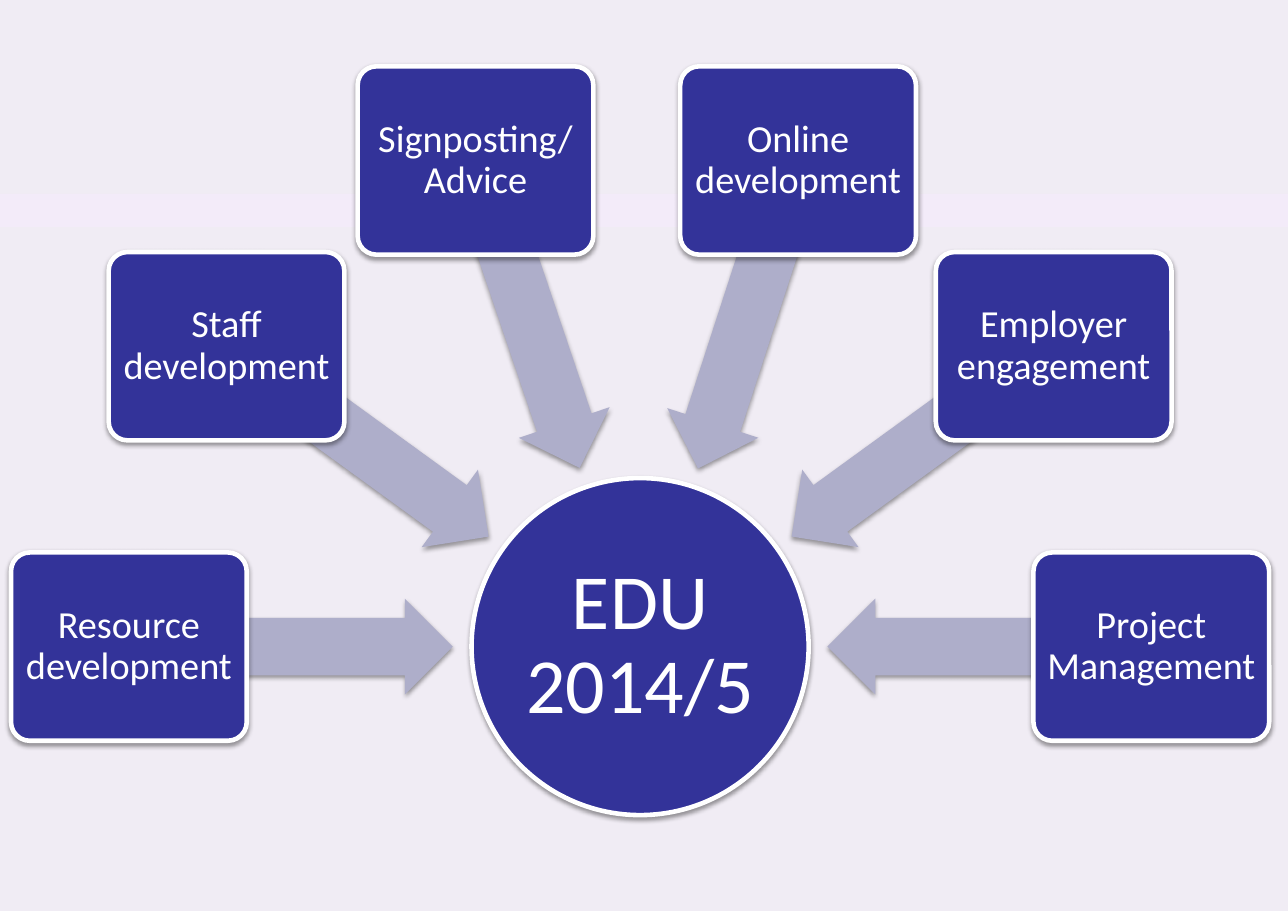
"""Build a slide of six work areas feeding into one central hub."""
import math

from lxml import etree
from pptx import Presentation
from pptx.dml.color import RGBColor
from pptx.enum import shapes, text
from pptx.oxml import ns
from pptx.util import Inches, Pt

HUB_LABEL = "EDU 2014/5"
AREAS = [
    ("Resource development", 0),
    ("Staff development", 0),
    ("Signposting/ Advice", -0.06),
    ("Online development", 0),
    ("Employer engagement", 0),
    ("Project Management", 0),
]

PAGE_WIDTH, PAGE_HEIGHT = 11.69, 8.27
HUB_X, HUB_Y, HUB_SIZE = 5.81, 5.87, 3.06
BOX_WIDTH, BOX_HEIGHT = 2.14, 1.71
ARROW_LENGTH, ARROW_HEIGHT = 2.94, 0.87
BOX_RADIUS, ARROW_RADIUS = 4.64, 3.17

BACKGROUND = RGBColor(0xF0, 0xEC, 0xF4)
BAND = RGBColor(0xF3, 0xEB, 0xF9)
INDIGO = RGBColor(0x33, 0x33, 0x99)
LAVENDER = RGBColor(0xAE, 0xAE, 0xCA)
WHITE = RGBColor(0xFF, 0xFF, 0xFF)


def add_centred(page, kind, x, y, width, height, fill):
    shape = page.shapes.add_shape(
        kind, Inches(x - width / 2), Inches(y - height / 2), Inches(width), Inches(height))
    shape.shadow.inherit = False
    shape.fill.solid()
    shape.fill.fore_color.rgb = fill
    shape.line.fill.background()
    return shape


def add_shadow(shape):
    effects = shape.element.spPr.find(ns.qn("a:effectLst"))
    shadow = etree.SubElement(
        effects, ns.qn("a:outerShdw"), blurRad=str(Pt(3.1)), dist=str(Pt(1.6)),
        dir="5400000", rotWithShape="0")
    colour = etree.SubElement(shadow, ns.qn("a:srgbClr"), val="000000")
    etree.SubElement(colour, ns.qn("a:alpha"), val="38000")


def add_label(shape, label, size, inset):
    shape.line.color.rgb = WHITE
    shape.line.width = Pt(3)
    frame = shape.text_frame
    frame.text = label
    frame.word_wrap = True
    frame.vertical_anchor = text.MSO_ANCHOR.MIDDLE
    frame.margin_left = frame.margin_right = Inches(inset)
    frame.margin_top = frame.margin_bottom = Inches(inset)
    para = frame.paragraphs[0]
    para.alignment = text.PP_ALIGN.CENTER
    para.line_spacing = 0.9
    font = para.runs[0].font
    font.name = "Calibri"
    font.size = Pt(size)
    font.color.rgb = WHITE


def add_area(page, label, angle, nudge):
    dx = -BOX_RADIUS * math.cos(angle) + nudge
    dy = -BOX_RADIUS * math.sin(angle)
    share = ARROW_RADIUS / BOX_RADIUS

    arrow = add_centred(
        page, shapes.MSO_SHAPE.LEFT_ARROW, HUB_X + dx * share, HUB_Y + dy * share,
        ARROW_LENGTH, ARROW_HEIGHT, LAVENDER)
    arrow.adjustments[0] = 0.6
    arrow.adjustments[1] = 0.5
    arrow.rotation = math.degrees(math.atan2(dy, dx)) % 360
    add_shadow(arrow)

    box = add_centred(
        page, shapes.MSO_SHAPE.ROUNDED_RECTANGLE, HUB_X + dx, HUB_Y + dy,
        BOX_WIDTH, BOX_HEIGHT, INDIGO)
    box.adjustments[0] = 0.1
    add_shadow(box)
    add_label(box, label, 25, 0.05)


def main():
    deck = Presentation()
    deck.slide_width, deck.slide_height = Inches(PAGE_WIDTH), Inches(PAGE_HEIGHT)
    page = deck.slides.add_slide(deck.slide_layouts[6])
    page.background.fill.solid()
    page.background.fill.fore_color.rgb = BACKGROUND

    add_centred(page, shapes.MSO_SHAPE.RECTANGLE, PAGE_WIDTH / 2, 1.91, PAGE_WIDTH, 0.3, BAND)
    hub = add_centred(page, shapes.MSO_SHAPE.OVAL, HUB_X, HUB_Y, HUB_SIZE, HUB_SIZE, INDIGO)
    add_shadow(hub)
    add_label(hub, HUB_LABEL, 51, 0.04)

    step = math.pi / (len(AREAS) - 1)
    for index, (label, nudge) in enumerate(AREAS):
        add_area(page, label, index * step, nudge)
    deck.save("out.pptx")


if __name__ == "__main__":
    main()
